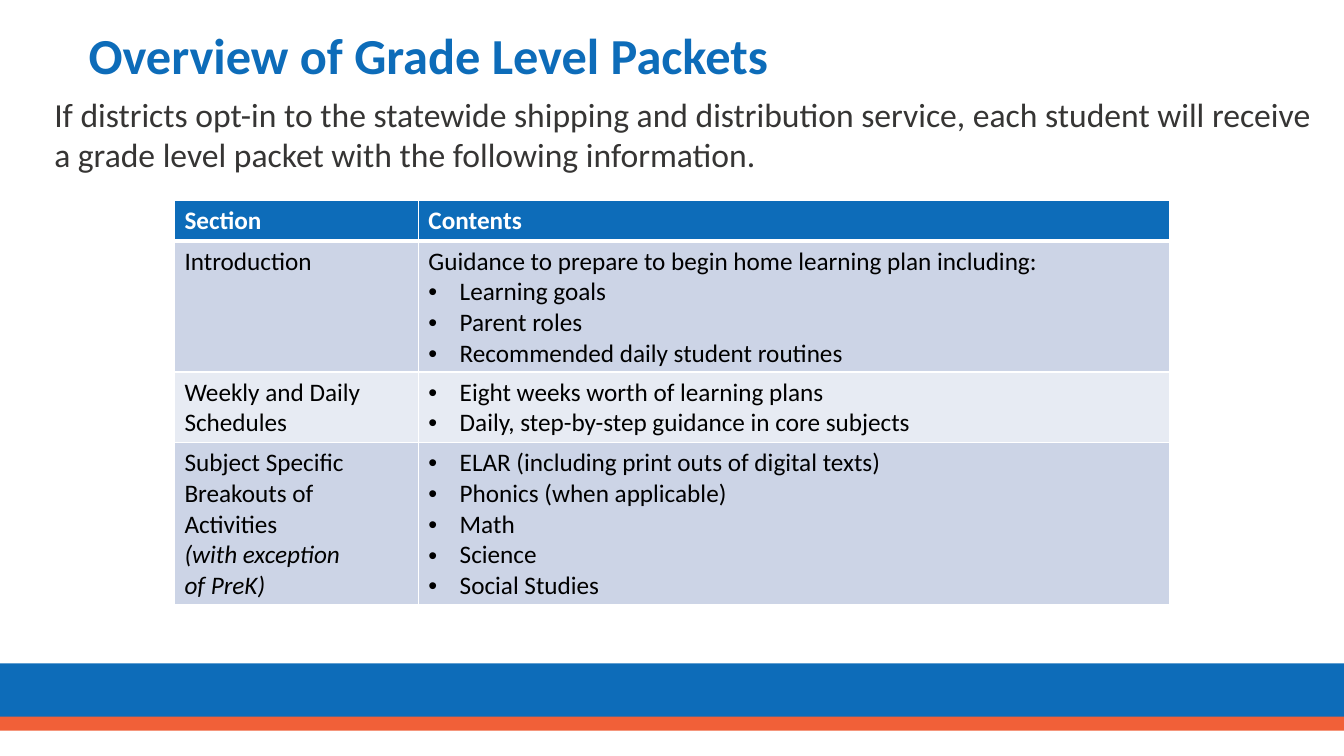
from lxml import etree
from pptx import Presentation
from pptx.dml.color import RGBColor
from pptx.enum import shapes, text
from pptx.oxml import ns
from pptx.util import Inches, Pt

BLUE, ORANGE, WHITE = "0D6CB9", "F16038", "FFFFFF"
BODY, BLACK = "363534", "000000"
BANDS = ["CCD4E6", "E7EBF3"]
BULLET = "• "
BREAK = "\n"

# Each cell is a list of paragraphs; a paragraph is split at line breaks,
# and lines in parentheses style are listed in ITALIC.
HEADER = [["Section"], ["Contents"]]
SECTIONS = [
    [["Introduction"],
     ["Guidance to prepare to begin home learning plan including:",
      "• Learning goals", "• Parent roles",
      "• Recommended daily student routines"]],
    [["Weekly and Daily Schedules"],
     ["• Eight weeks worth of learning plans",
      "• Daily, step-by-step guidance in core subjects"]],
    [["Subject Specific Breakouts of Activities\n(with exception \nof PreK)"],
     ["• ELAR (including print outs of digital texts)",
      "• Phonics (when applicable)", "• Math", "• Science",
      "• Social Studies"]],
]
ITALIC = {"(with exception ", "of PreK)"}
COLUMN_WIDTHS = [2.42, 7.45]
ROW_HEIGHTS = [0.4, 1.3, 0.7, 1.61]


def rgb(color):
    return RGBColor.from_string(color)


def add_run(paragraph, words, size, color, bold=False, italic=False):
    run = paragraph.add_run()
    run.text = words
    font = run.font
    font.name, font.size = "Calibri", Pt(size)
    font.bold, font.italic = bold, italic
    font.color.rgb = rgb(color)


def add_text(slide, box, words, size, color, bold=False,
             anchor=text.MSO_ANCHOR.TOP, spacing=1.0):
    frame = slide.shapes.add_textbox(*map(Inches, box)).text_frame
    frame.word_wrap = True
    frame.vertical_anchor = anchor
    paragraph = frame.paragraphs[0]
    paragraph.line_spacing = spacing
    add_run(paragraph, words, size, color, bold)


def add_band(slide, box, color):
    band = slide.shapes.add_shape(shapes.MSO_SHAPE.RECTANGLE, *map(Inches, box))
    band.shadow.inherit = False
    band.fill.solid()
    band.fill.fore_color.rgb = rgb(color)
    band.line.fill.background()


def add_footer(slide, left, top, width):
    add_band(slide, (left, top, width, 0.58), BLUE)
    add_band(slide, (left, top + 0.53, width, 0.14), ORANGE)


def add_bullet(paragraph):
    properties = paragraph._p.get_or_add_pPr()
    properties.set("marL", str(Inches(0.31)))
    properties.set("indent", str(-Inches(0.31)))
    font = etree.SubElement(properties, ns.qn("a:buFont"))
    font.set("typeface", "Arial")
    etree.SubElement(properties, ns.qn("a:buChar")).set("char", BULLET.strip())


def set_borders(cell, widths):
    properties = cell._tc.get_or_add_tcPr()
    for side, width in widths.items():
        line = etree.SubElement(properties, ns.qn("a:ln" + side))
        line.set("w", str(Pt(width)))
        fill = etree.SubElement(line, ns.qn("a:solidFill"))
        etree.SubElement(fill, ns.qn("a:srgbClr")).set("val", WHITE)


def fill_cell(cell, paragraphs, fill, color, header):
    top, bottom = (1, 3) if header else (1, 1)
    set_borders(cell, {"L": 1, "R": 1, "T": top, "B": bottom})
    cell.fill.solid()
    cell.fill.fore_color.rgb = rgb(fill)
    frame = cell.text_frame
    for i, words in enumerate(paragraphs):
        paragraph = frame.add_paragraph() if i else frame.paragraphs[0]
        if words.startswith(BULLET):
            add_bullet(paragraph)
        for j, line in enumerate(words.removeprefix(BULLET).split(BREAK)):
            if j:
                paragraph.add_line_break()
            add_run(paragraph, line, 18, color, header, line in ITALIC)


def add_packet_table(slide, left, top):
    rows = [HEADER] + SECTIONS
    table = slide.shapes.add_table(
        len(rows), len(COLUMN_WIDTHS), Inches(left), Inches(top),
        Inches(sum(COLUMN_WIDTHS)), Inches(sum(ROW_HEIGHTS))).table
    for column, width in zip(table.columns, COLUMN_WIDTHS):
        column.width = Inches(width)
    for r, (row, height) in enumerate(zip(rows, ROW_HEIGHTS)):
        table.rows[r].height = Inches(height)
        header = r == 0
        fill = BLUE if header else BANDS[(r - 1) % 2]
        for c, paragraphs in enumerate(row):
            # The line under the header belongs to both rows
            fill_cell(table.cell(r, c), paragraphs, fill,
                      WHITE if header else BLACK, header)
            if r == 1:
                top_line = table.cell(r, c)._tc.tcPr.find(ns.qn("a:lnT"))
                top_line.set("w", str(Pt(3)))


def main():
    deck = Presentation()
    deck.slide_width, deck.slide_height = Inches(13.33), Inches(7.5)
    slide = deck.slides.add_slide(deck.slide_layouts[6])

    # Footer bands
    add_footer(slide, 0, 6.58, 13.33)
    # Title and introduction
    add_text(slide, (0.78, 0.17, 12.16, 0.82), "Overview of Grade Level Packets",
             36, BLUE, True, text.MSO_ANCHOR.MIDDLE, 0.9)
    add_text(slide, (0.44, 0.88, 12.76, 0.91),
             "If districts opt-in to the statewide shipping and distribution "
             "service, each student will receive a grade level packet with the "
             "following information.", 24, BODY)
    # Packet contents
    add_packet_table(slide, 1.73, 1.99)

    deck.save("out.pptx")


if __name__ == "__main__":
    main()
